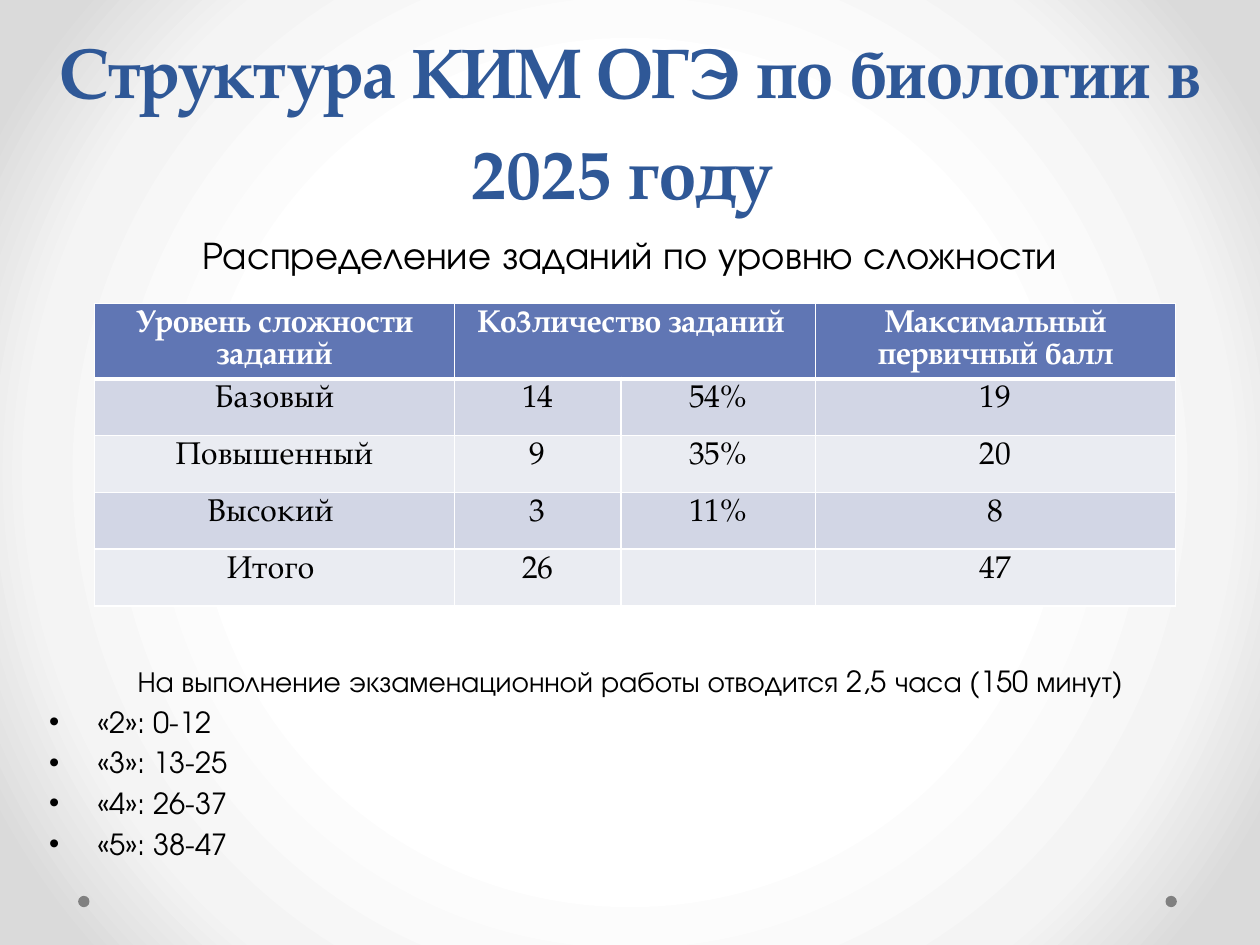
from collections import namedtuple

from lxml.etree import SubElement
from pptx import Presentation
from pptx.dml.color import RGBColor
from pptx.enum.shapes import MSO_SHAPE
from pptx.enum.text import MSO_ANCHOR, MSO_AUTO_SIZE, PP_ALIGN
from pptx.oxml.ns import qn
from pptx.util import Inches, Pt

SERIF = "TeX Gyre Pagella"
SANS = "TeX Gyre Adventor"
WIDTH, HEIGHT = Inches(10), Inches(7.5)
Box = namedtuple("Box", "left top width height")

HEADINGS = ["Уровень сложности\nзаданий", "Ко3личество заданий ", "",
            "Максимальный\nпервичный балл"]
LEVELS = [
    ["Базовый", "14", "54%", "19"],
    ["Повышенный", "9", "35%", "20"],
    ["Высокий ", "3", "11%", "8"],
    ["Итого ", "26", "", "47"],
]
GRADES = ["«2»: 0-12", "«3»: 13-25", "«4»: 26-37", "«5»: 38-47"]
COLUMN_SHARES = [0.333, 0.154, 0.18, 0.333]


def share(left, top, width, height):
    """Turn shares of the slide's size into a box of lengths."""
    return Box(int(left * WIDTH), int(top * HEIGHT), int(width * WIDTH), int(height * HEIGHT))


def color(value):
    """Turn a hex string into a colour."""
    return RGBColor.from_string(value)


def place(shape, box):
    """Move a shape into a box."""
    shape.left, shape.top, shape.width, shape.height = box


def add_run(paragraph, text, font, size, hex_color="000000", bold=False):
    """Append one formatted run to a paragraph."""
    run = paragraph.add_run()
    run.text = text
    run.font.name, run.font.size, run.font.bold = font, Pt(size), bold
    run.font.color.rgb = color(hex_color)


def set_bullet(paragraph, bullet=None):
    """Give a paragraph a hanging bullet, or none and no indent."""
    properties = paragraph._p.get_or_add_pPr()
    properties.set("marL", str(Inches(0.67) if bullet else 0))
    properties.set("indent", str(Inches(-0.38) if bullet else 0))
    if bullet:
        SubElement(properties, qn("a:buFont"), typeface="Arial")
        SubElement(properties, qn("a:buChar"), char=bullet)
    else:
        SubElement(properties, qn("a:buNone"))


def set_border(cell, side, points):
    """Draw one white border of a table cell."""
    line = SubElement(cell._tc.get_or_add_tcPr(), qn(f"a:ln{side}"), w=str(Pt(points)))
    fill = SubElement(line, qn("a:solidFill"))
    SubElement(fill, qn("a:srgbClr"), val="FFFFFF")


def paint_background(slide, stops):
    """Fill the background with a gradient spreading from the centre."""
    slide.background.fill.gradient()
    gradient = slide.element.find(".//" + qn("a:gradFill"))
    for child in list(gradient):
        gradient.remove(child)
    stop_list = SubElement(gradient, qn("a:gsLst"))
    for position, value in stops:
        stop = SubElement(stop_list, qn("a:gs"), pos=str(position * 1000))
        SubElement(stop, qn("a:srgbClr"), val=value)
    route = SubElement(gradient, qn("a:path"), path="circle")
    SubElement(route, qn("a:fillToRect"), l="50000", t="50000", r="50000", b="50000")


def add_dot(slide, box):
    """Add one grey footer dot."""
    dot = slide.shapes.add_shape(MSO_SHAPE.OVAL, *box)
    dot.shadow.inherit = False
    dot.fill.solid()
    dot.fill.fore_color.rgb = color("808080")
    dot.line.fill.background()


def fill_title(slide, box):
    """Place the slide title."""
    title = slide.shapes.title
    place(title, box)
    frame = title.text_frame
    frame.word_wrap, frame.auto_size = True, MSO_AUTO_SIZE.NONE
    frame.vertical_anchor = MSO_ANCHOR.BOTTOM
    paragraph = frame.paragraphs[0]
    paragraph.alignment, paragraph.line_spacing = PP_ALIGN.CENTER, Pt(58)
    add_run(paragraph, "Структура КИМ ОГЭ по биологии в 2025 году ", SERIF, 40, "2F5897", True)


def fill_body(slide, box):
    """Place the caption above the table, the duration and the grades below it."""
    body = slide.placeholders[1]
    place(body, box)
    frame = body.text_frame
    frame.word_wrap, frame.auto_size = True, MSO_AUTO_SIZE.NONE
    frame.vertical_anchor = MSO_ANCHOR.TOP
    lines = [
        ("Распределение заданий по уровню сложности", 22.2, 4.4, None),
        ("На выполнение экзаменационной работы отводится 2,5 часа (150 минут)", 16.6, 221, None),
    ] + [(grade, 16.6, 3.3, "•") for grade in GRADES]
    for index, (text, size, space, bullet) in enumerate(lines):
        paragraph = frame.add_paragraph() if index else frame.paragraphs[0]
        paragraph.alignment = PP_ALIGN.LEFT if bullet else PP_ALIGN.CENTER
        paragraph.space_before = Pt(space)
        set_bullet(paragraph, bullet)
        add_run(paragraph, text, SANS, size)


def fill_cell(cell, text, fill, text_color, bold, bottom_line):
    """Write, border and fill one table cell."""
    for side, points in zip("LRTB", (1, 1, 1, bottom_line)):
        set_border(cell, side, points)
    cell.fill.solid()
    cell.fill.fore_color.rgb = color(fill)
    for index, line in enumerate(text.split("\n")):
        frame = cell.text_frame
        paragraph = frame.add_paragraph() if index else frame.paragraphs[0]
        paragraph.alignment, paragraph.line_spacing = PP_ALIGN.CENTER, Pt(18)
        if line:
            add_run(paragraph, line, SERIF, 18, text_color, bold)


def add_level_table(slide, box):
    """Add the table of tasks by level of difficulty."""
    rows = [HEADINGS] + LEVELS
    table = slide.shapes.add_table(len(rows), len(COLUMN_SHARES), *box).table
    for column, part in zip(table.columns, COLUMN_SHARES):
        column.width = int(box.width * part)
    for index, row in enumerate(table.rows):
        row.height = int(box.height * (0.1875 if index else 0.25))
    for row_index, texts in enumerate(rows):
        header = row_index == 0
        fill = "6076B4" if header else ("EAECF2", "D2D6E5")[row_index % 2]
        for column_index, text in enumerate(texts):
            fill_cell(table.cell(row_index, column_index), text, fill,
                      "FFFFFF" if header else "000000", header, 3 if header else 1)
    table.cell(0, 1).merge(table.cell(0, 2))


def main():
    """Build and save the presentation."""
    presentation = Presentation()
    presentation.slide_width, presentation.slide_height = WIDTH, HEIGHT
    slide = presentation.slides.add_slide(presentation.slide_layouts[1])
    paint_background(slide, [(50, "FFFFFF"), (76, "F4F4F4"), (92, "DADADA")])
    for left in (0.062, 0.925):
        add_dot(slide, share(left, 0.948, 0.009, 0.012))
    fill_title(slide, share(0, 0, 1, 0.233))
    fill_body(slide, share(0, 0.237, 1, 0.693))
    add_level_table(slide, share(0.075, 0.321, 0.858, 0.32))
    presentation.save("out.pptx")


if __name__ == "__main__":
    main()
